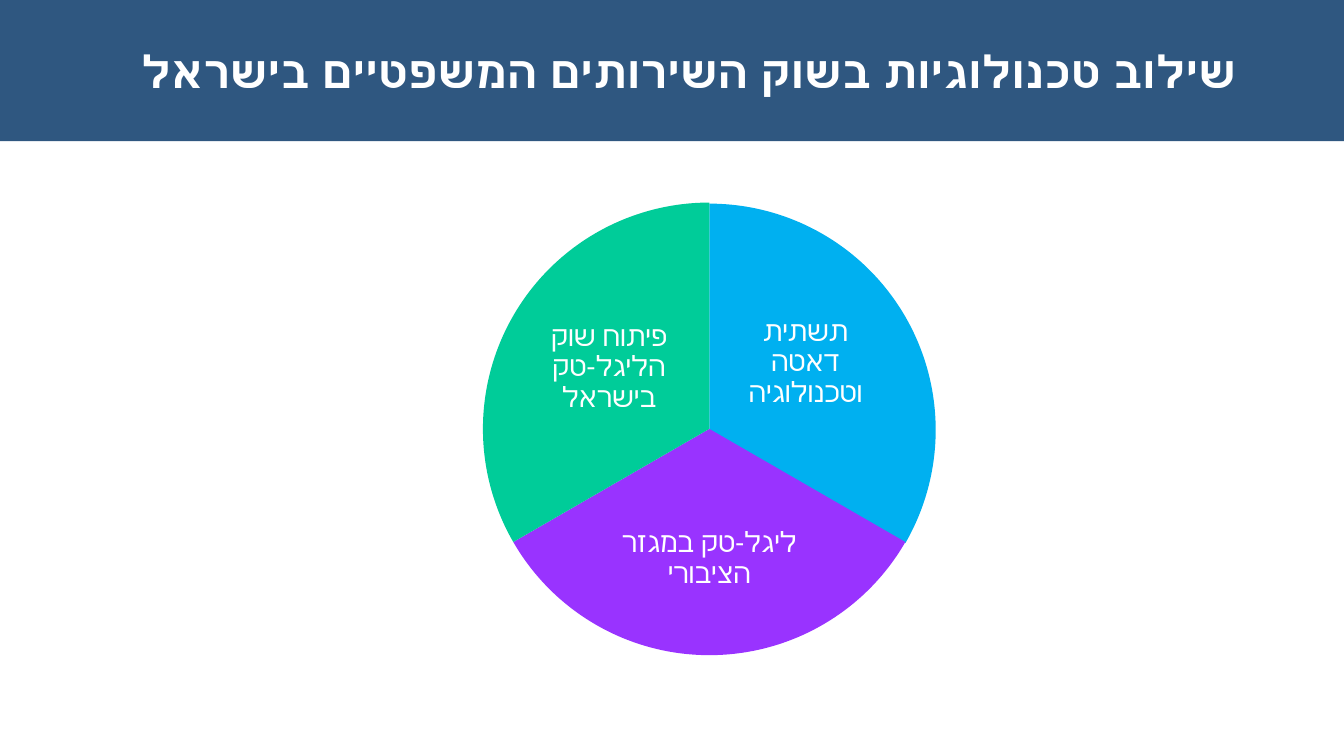
import pptx
import pptx.util
import pptx.dml.color
import pptx.enum.lang
import pptx.enum.shapes
import pptx.enum.text

Inches = pptx.util.Inches
RGBColor = pptx.dml.color.RGBColor
Kind = pptx.enum.shapes.MSO_SHAPE
Anchor = pptx.enum.text.MSO_ANCHOR

NAVY = RGBColor(0x2F, 0x57, 0x80)
BLUE = RGBColor(0x00, 0xB0, 0xF0)
PURPLE = RGBColor(0x99, 0x33, 0xFF)
GREEN = RGBColor(0x00, 0xCC, 0x99)
WHITE = RGBColor(0xFF, 0xFF, 0xFF)
FONT = "Calibri"

TITLE = "שילוב טכנולוגיות בשוק השירותים המשפטיים בישראל"
SLICES = [
    ("תשתית דאטה וטכנולוגיה", BLUE, 2.02, (7.23, 2.85, 1.52, 1.5)),
    ("ליגל-טק במגזר הציבורי", PURPLE, 2.01, (6.02, 4.85, 2.03, 1.39)),
    ("פיתוח שוק הליגל-טק בישראל", GREEN, 2.01, (5.28, 2.9, 1.52, 1.5)),
]


def add_shape(shapes, kind, box, color):
    shape = shapes.add_shape(kind, *map(Inches, box))
    shape.shadow.inherit = False
    shape.fill.solid()
    shape.fill.fore_color.rgb = color
    shape.line.fill.background()
    return shape


def add_text(shapes, text, box, size=20, bold=False, inset=None,
             anchor=Anchor.MIDDLE, spacing=None):
    frame = shapes.add_textbox(*map(Inches, box)).text_frame
    frame.word_wrap = True
    frame.vertical_anchor = anchor
    if inset is not None:
        frame.margin_left = frame.margin_right = Inches(inset)
        frame.margin_top = frame.margin_bottom = Inches(inset)
    para = frame.paragraphs[0]
    para.alignment = pptx.enum.text.PP_ALIGN.CENTER
    para.line_spacing = spacing
    para._p.get_or_add_pPr().set("rtl", "1")
    run = para.add_run()
    run.text = text
    run.font.size = pptx.util.Pt(size)
    run.font.bold = bold
    run.font.name = FONT
    run.font.color.rgb = WHITE
    run.font.language_id = pptx.enum.lang.MSO_LANGUAGE_ID.HEBREW


def add_slice(shapes, top, start, sweep, color):
    pie = add_shape(shapes, Kind.PIE, (4.79, top, 4.49, 4.49), color)
    for index, angle in enumerate((start, start + sweep)):
        pie.adjustments[index] = angle % 360 * 0.6


def add_wheel(shapes):
    sweep = 360 / len(SLICES)
    for index, (label, color, top, box) in enumerate(SLICES):
        add_slice(shapes, top, 270 + index * sweep, sweep, color)
        add_text(shapes, label, box, inset=0.03, spacing=0.9)


def main():
    deck = pptx.Presentation()
    deck.slide_width = Inches(13.33)
    deck.slide_height = Inches(7.5)
    slide = deck.slides.add_slide(deck.slide_layouts[6])
    add_shape(slide.shapes, Kind.RECTANGLE, (0, 0, 13.33, 1.4), NAVY)
    add_text(slide.shapes, TITLE, (1, 0.38, 11.67, 0.64), size=32, bold=True,
             anchor=Anchor.TOP)
    add_wheel(slide.shapes.add_group_shape().shapes)
    deck.save("out.pptx")


if __name__ == "__main__":
    main()
